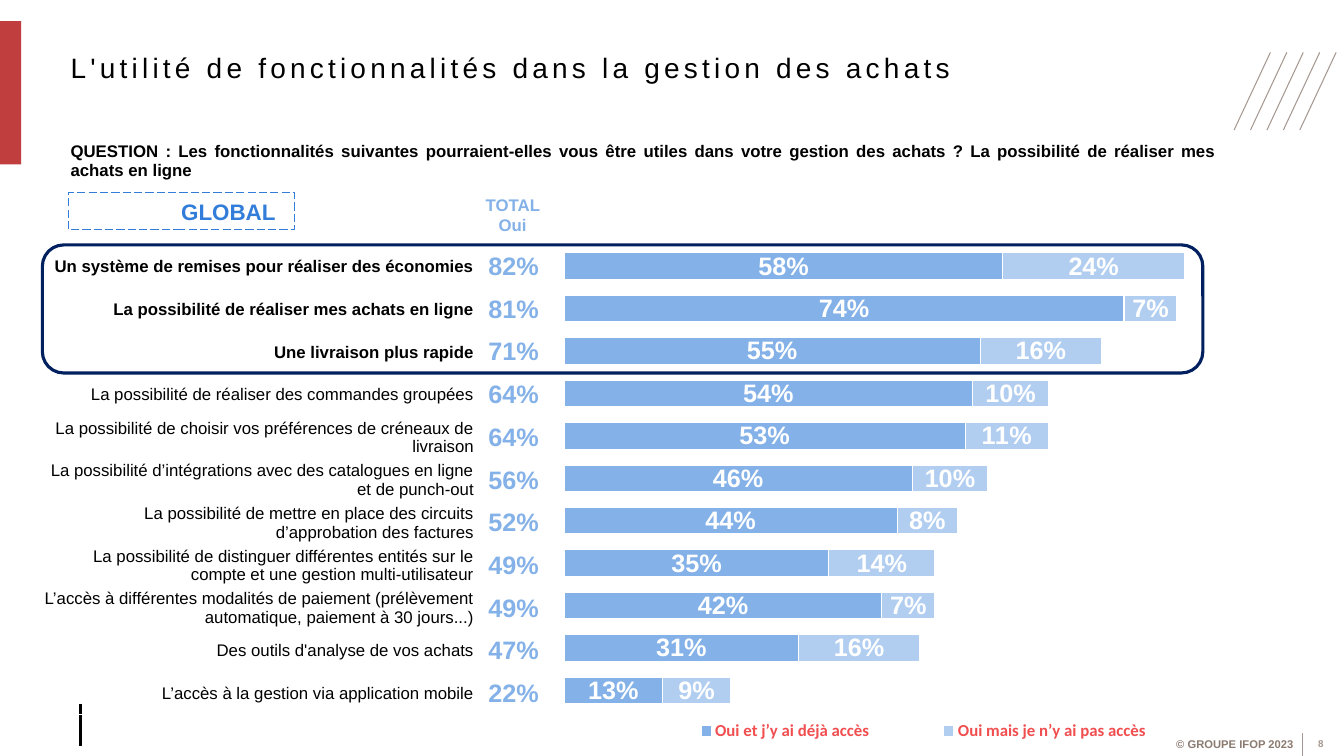
from lxml.etree import SubElement
from pptx import Presentation
from pptx.chart.data import CategoryChartData
from pptx.dml.color import RGBColor
from pptx.enum.chart import XL_CHART_TYPE, XL_LABEL_POSITION, XL_LEGEND_POSITION
from pptx.enum.dml import MSO_LINE
from pptx.enum.shapes import MSO_CONNECTOR, MSO_SHAPE
from pptx.enum.text import MSO_ANCHOR, PP_ALIGN
from pptx.oxml import parse_xml
from pptx.oxml.ns import nsdecls, qn
from pptx.util import Inches, Pt

# Content
TITLE = "L'utilité de fonctionnalités dans la gestion des achats"
QUESTION = ("QUESTION : Les fonctionnalités suivantes pourraient-elles vous être utiles dans votre "
            "gestion des achats ? La possibilité de réaliser mes achats en ligne")
SCOPE, TOTAL_HEADING = "GLOBAL", "TOTAL Oui"
COPYRIGHT, PAGE = "© GROUPE IFOP 2023", "8"
ANSWERS = ("Oui et j’y ai déjà accès", "Oui mais je n’y ai pas accès")
FEATURES = [  # label, has access, has no access
    ("Un système de remises pour réaliser des économies", 58, 24),
    ("La possibilité de réaliser mes achats en ligne", 74, 7),
    ("Une livraison plus rapide", 55, 16),
    ("La possibilité de réaliser des commandes groupées", 54, 10),
    ("La possibilité de choisir vos préférences de créneaux de livraison", 53, 11),
    ("La possibilité d’intégrations avec des catalogues en ligne et de punch-out", 46, 10),
    ("La possibilité de mettre en place des circuits d’approbation des factures", 44, 8),
    ("La possibilité de distinguer différentes entités sur le compte et une gestion "
     "multi-utilisateur", 35, 14),
    ("L’accès à différentes modalités de paiement (prélèvement automatique, paiement à "
     "30 jours...)", 42, 7),
    ("Des outils d'analyse de vos achats", 31, 16),
    ("L’accès à la gestion via application mobile", 13, 9),
]
TOP_COUNT = 3


class Theme:
    font, legend_font = "Arial", "Calibri"
    black, white = RGBColor(0, 0, 0), RGBColor(255, 255, 255)
    access, no_access = RGBColor(0x83, 0xB1, 0xE8), RGBColor(0xB1, 0xCE, 0xF1)
    scope, frame = RGBColor(0x31, 0x7D, 0xD9), RGBColor(0x00, 0x20, 0x60)
    legend, band = RGBColor(0xF1, 0x4E, 0x50), RGBColor(0xB2, 0x0E, 0x10)
    taupe, grey = RGBColor(0x8B, 0x7A, 0x6F), RGBColor(0xA5, 0x98, 0x91)
    title_size, value_size, scope_size, text_size = 20, 18, 16, 12
    copyright_size, page_size = 8, 7


# Grid, in inches
SLIDE_W, SLIDE_H = 13.33, 7.5
MARGIN, BODY_W = 0.6, 11.57
LABEL_X, LABEL_W, TOTAL_W = 0.42, 4.29, 0.77
ROWS_Y, ROWS_H = 2.43, 4.66
ROW_H = ROWS_H / len(FEATURES)
CHART_X, CHART_W, CHART_H = 5.59, 7.51, 5.05
FOOTER_Y, FOOTER_X = 7.27, 12.92

prs = Presentation()
prs.slide_width, prs.slide_height = Inches(SLIDE_W), Inches(SLIDE_H)
slide = prs.slides.add_slide(prs.slide_layouts[5])
shapes = slide.shapes


def box(*lengths):
    return [Inches(length) for length in lengths]


def set_font(font, size, color, bold=False, name=Theme.font):
    font.size, font.bold, font.name = Pt(size), bold, name
    font.color.rgb = color


def write(frame, text, size, color, align, bold=True):
    frame.word_wrap = True
    paragraph = frame.paragraphs[0]
    paragraph.text, paragraph.alignment = text, align
    set_font(paragraph.font, size, color, bold)


def add_text(area, *style):
    write(shapes.add_textbox(*box(*area)).text_frame, *style)


def add_line(x1, y1, x2, y2, color, width):
    line = shapes.add_connector(MSO_CONNECTOR.STRAIGHT, *box(x1, y1, x2, y2))
    line.line.color.rgb, line.line.width = color, Pt(width)
    SubElement(line._element.spPr, qn("a:effectLst"))


def add_shape(kind, area, color=None, width=None):
    shape = shapes.add_shape(kind, *box(*area))
    shape.shadow.inherit = False
    shape.fill.background()
    if width:
        shape.line.color.rgb, shape.line.width = color, Pt(width)
    else:
        shape.line.fill.background()
    return shape


def add_column(area, row_heights, texts, size, color, align, bold_count, margins=None):
    """One-column table whose first bold_count rows are bold."""
    table = shapes.add_table(len(texts), 1, *box(*area)).table
    table.first_row = table.horz_banding = False
    for i, (text, height) in enumerate(zip(texts, row_heights)):
        table.rows[i].height = Inches(height)
        cell = table.cell(i, 0)
        cell.fill.background()
        cell.vertical_anchor = MSO_ANCHOR.MIDDLE
        if margins:
            (cell.margin_left, cell.margin_top,
             cell.margin_right, cell.margin_bottom) = box(*margins)
        if text:
            write(cell.text_frame, text, size, color, align, i < bold_count)


# Title
title = shapes.title
title.left, title.top, title.width, title.height = box(MARGIN, 0.21, BODY_W, 0.91)
title.text_frame.vertical_anchor = MSO_ANCHOR.MIDDLE
write(title.text_frame, TITLE, Theme.title_size, Theme.black, PP_ALIGN.LEFT, False)
title.text_frame.paragraphs[0].runs[0]._r.get_or_add_rPr().set("spc", "300")

# Page decoration
band = add_shape(MSO_SHAPE.RECTANGLE, (0, 0.21, 0.21, 1.42))
band.fill.solid()
band.fill.fore_color.rgb = Theme.band
SubElement(band._element.spPr.find(".//" + qn("a:srgbClr")), qn("a:alpha"), val="80000")
for i in range(5):
    x = 12.6 + 0.163 * i
    add_line(x, 0.52, x - 0.36, 1.29, Theme.grey, 0.75)
add_line(0.8, 6.98, 0.8, 7.4, Theme.black, 2.25)

# Footer
add_text((11.2, FOOTER_Y, 1.73, 0.24), COPYRIGHT, Theme.copyright_size, Theme.taupe,
         PP_ALIGN.RIGHT)
add_text((12.87, FOOTER_Y, 0.46, 0.23), PAGE, Theme.page_size, Theme.grey, PP_ALIGN.CENTER)
add_line(FOOTER_X, FOOTER_Y, FOOTER_X, SLIDE_H, Theme.grey, 0.75)

# Question
add_column((MARGIN, 1.35, BODY_W, 0.55), (0.31, 0.24), (QUESTION, ""), Theme.text_size,
           Theme.black, PP_ALIGN.JUSTIFY, 1)

# Stacked bars
data = CategoryChartData(number_format='0"%"')
data.categories = [str(i + 1) for i in range(len(FEATURES))]
for i, answer in enumerate(ANSWERS, start=1):
    data.add_series(answer, [feature[i] for feature in FEATURES])
chart = shapes.add_chart(XL_CHART_TYPE.BAR_STACKED,
                         *box(CHART_X, ROWS_Y, CHART_W, CHART_H), data).chart
chart.has_title = False
set_font(chart.font, Theme.value_size, Theme.black)
chart.category_axis.reverse_order = True
chart.value_axis.minimum_scale, chart.value_axis.maximum_scale = 0, 100
chart.value_axis.has_major_gridlines = False
chart.category_axis.visible = chart.value_axis.visible = False

plot = chart.plots[0]
plot.gap_width, plot.overlap, plot.vary_by_categories = 60, 100, False
for series, color in zip(plot.series, (Theme.access, Theme.no_access)):
    series.format.fill.solid()
    series.format.fill.fore_color.rgb = color
    series.format.line.color.rgb, series.format.line.width = Theme.white, Pt(0.75)
    labels = series.data_labels
    labels.show_value, labels.position = True, XL_LABEL_POSITION.CENTER
    labels.number_format, labels.number_format_is_linked = '0"%"', False
    set_font(labels.font, Theme.value_size, Theme.white, True)

chart.has_legend = True
chart.legend.position, chart.legend.include_in_layout = XL_LEGEND_POSITION.BOTTOM, False
set_font(chart.legend.font, Theme.text_size, Theme.legend, True, Theme.legend_font)


def layout_xml(x, y, w, h, inner=False):
    target = '<c:layoutTarget val="inner"/>' if inner else ""
    return parse_xml(
        f'<c:layout {nsdecls("c")}><c:manualLayout>{target}<c:xMode val="edge"/>'
        f'<c:yMode val="edge"/><c:x val="{x}"/><c:y val="{y}"/><c:w val="{w}"/>'
        f'<c:h val="{h}"/></c:manualLayout></c:layout>')


plot_area = chart._chartSpace.chart.plotArea
for old_layout in plot_area.findall(qn("c:layout")):
    plot_area.remove(old_layout)
plot_area.insert(0, layout_xml(0, 0, 1, 0.917, inner=True))
legend = chart.legend._element
for old_layout in legend.findall(qn("c:layout")):
    legend.remove(old_layout)
legend.find(qn("c:legendPos")).addnext(layout_xml(0.09, 0.92, 0.77, 0.07))

# Feature labels and totals
row_heights, tight = [ROW_H] * len(FEATURES), (0.01, 0.01, 0.01, 0)
add_column((LABEL_X, ROWS_Y, LABEL_W, ROWS_H), row_heights, [f[0] for f in FEATURES],
           Theme.text_size, Theme.black, PP_ALIGN.RIGHT, TOP_COUNT, tight)
add_column((LABEL_X + LABEL_W, ROWS_Y, TOTAL_W, ROWS_H), row_heights,
           [f"{f[1] + f[2]}%" for f in FEATURES],
           Theme.value_size, Theme.access, PP_ALIGN.CENTER, len(FEATURES), tight)
add_text((4.58, 1.88, 1.01, 0.3), TOTAL_HEADING, Theme.text_size, Theme.access,
         PP_ALIGN.CENTER)

# Scope box and frame around the leading features
scope = add_shape(MSO_SHAPE.RECTANGLE, (0.68, 1.91, 2.24, 0.37), Theme.scope, 0.75)
scope.line.dash_style = MSO_LINE.LONG_DASH
scope.text_frame.margin_left = Inches(1.03)
write(scope.text_frame, SCOPE, Theme.scope_size, Theme.scope, PP_ALIGN.CENTER)
add_shape(MSO_SHAPE.ROUNDED_RECTANGLE,
          (LABEL_X, ROWS_Y, 11.51, TOP_COUNT * ROW_H), Theme.frame, 2.25)

prs.save("out.pptx")
